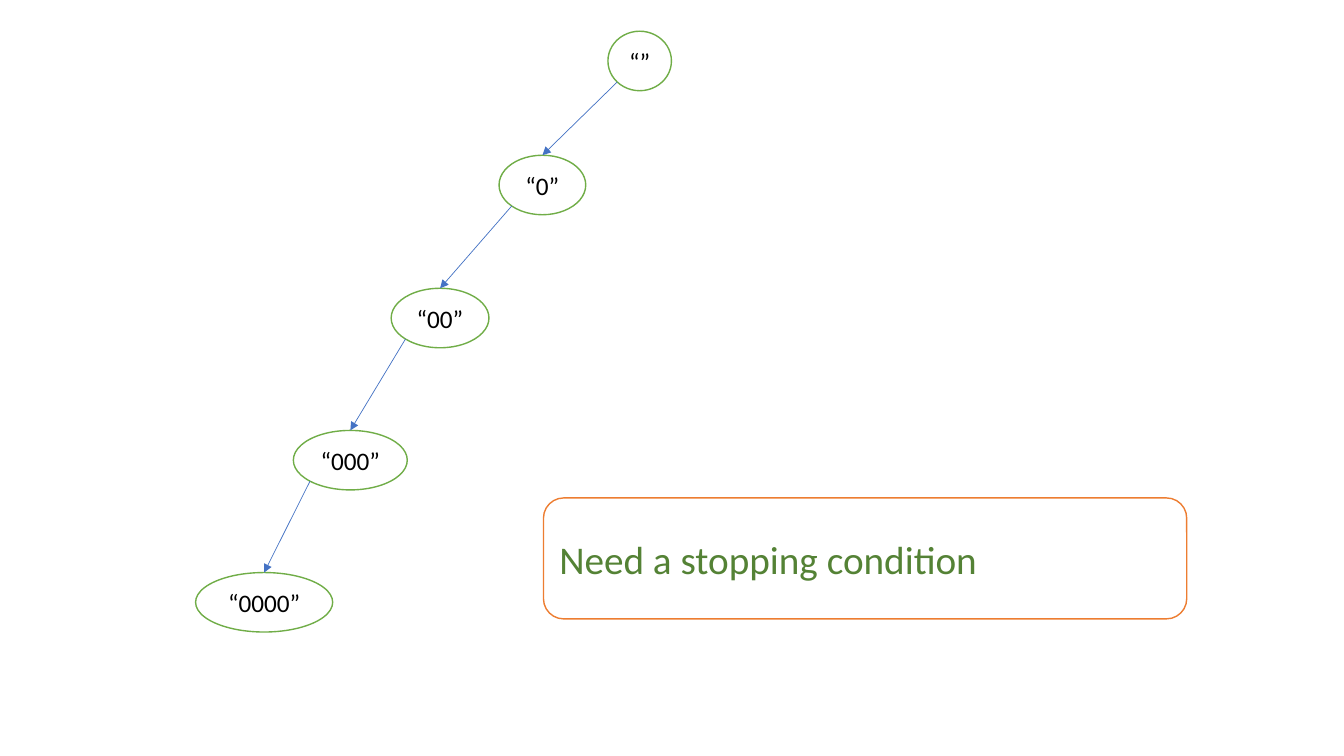
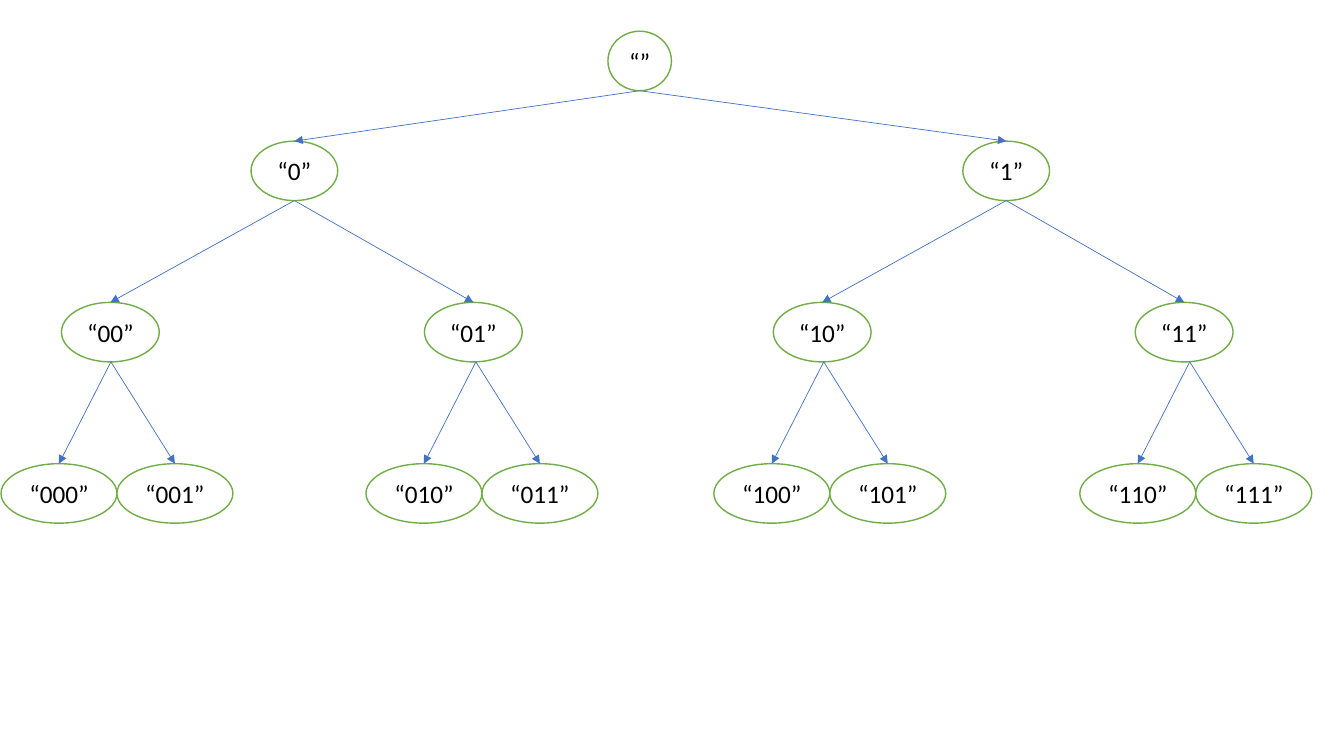
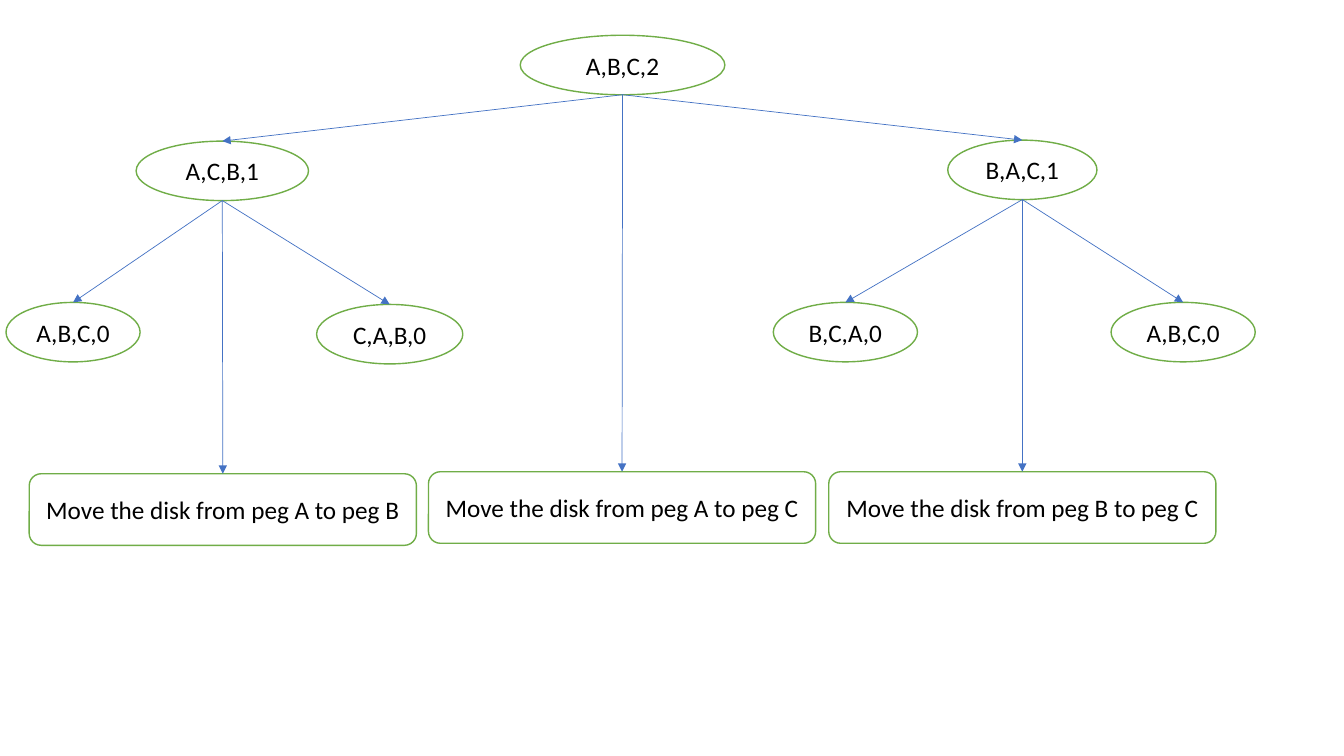
"""Build three slides of recursion trees: binary strings and disk moves."""
import pptx
import pptx.dml.color
import pptx.enum.shapes
import pptx.enum.text
import pptx.oxml
import pptx.oxml.ns
import pptx.util

Inches = pptx.util.Inches
SHAPES = pptx.enum.shapes.MSO_SHAPE
ALIGN = pptx.enum.text.PP_ALIGN

FONT = "Calibri"
WHITE, BLACK = "FFFFFF", "000000"
GREEN, DARK_GREEN, ORANGE, BLUE = "70AD47", "548235", "ED7D31", "4472C4"
NODE_HEIGHT = 0.59
MOVE_WIDTH, MOVE_HEIGHT = 3.84, 0.71
STRING_WIDTHS = [0.63, 0.86, 0.97, 1.15]
DIAGONAL_INSET = 0.146


def color(value):
    """Return a colour from a hex string."""
    return pptx.dml.color.RGBColor.from_string(value)


def add_outlined(slide, kind, box, text, line=GREEN, size=18, ink=BLACK,
                 align=ALIGN.CENTER, margin=0):
    """Add a white outlined shape with one line of text."""
    shape = slide.shapes.add_shape(kind, *map(Inches, box))
    shape.shadow.inherit = False
    shape.fill.solid()
    shape.fill.fore_color.rgb = color(WHITE)
    shape.line.color.rgb = color(line)
    shape.line.width = pptx.util.Pt(1)
    frame = shape.text_frame
    frame.word_wrap = True
    frame.vertical_anchor = pptx.enum.text.MSO_ANCHOR.MIDDLE
    frame.margin_left = frame.margin_right = Inches(margin)
    frame.margin_top = frame.margin_bottom = 0
    frame.text = text
    paragraph = frame.paragraphs[0]
    paragraph.alignment = align
    font = paragraph.runs[0].font
    font.name = FONT
    font.size = pptx.util.Pt(size)
    font.color.rgb = color(ink)
    return shape


def add_node(slide, text, left, top, width):
    """Add an elliptical tree node."""
    return add_outlined(slide, SHAPES.OVAL, (left, top, width, NODE_HEIGHT), text)


def add_move(slide, text, left, top):
    """Add a rounded box that states a disk move."""
    box = (left, top, MOVE_WIDTH, MOVE_HEIGHT)
    return add_outlined(slide, SHAPES.ROUNDED_RECTANGLE, box, text)


def top_point(shape):
    """Return the middle of the upper edge."""
    return shape.left + shape.width // 2, shape.top


def bottom_point(shape):
    """Return the middle of the lower edge."""
    return shape.left + shape.width // 2, shape.top + shape.height


def lower_left_point(shape):
    """Return the lower left diagonal point of an ellipse."""
    return (shape.left + int(shape.width * DIAGONAL_INSET),
            shape.top + int(shape.height * (1 - DIAGONAL_INSET)))


def add_arrow(slide, start, end):
    """Add a thin straight arrow between two points."""
    connector = slide.shapes.add_connector(
        pptx.enum.shapes.MSO_CONNECTOR.STRAIGHT, *start, *end)
    connector.line.color.rgb = color(BLUE)
    connector.line.width = pptx.util.Pt(0.5)
    properties = connector.element.spPr
    head = pptx.oxml.parse_xml(
        f'<a:tailEnd {pptx.oxml.ns.nsdecls("a")} type="triangle"/>')
    properties.find(pptx.oxml.ns.qn("a:ln")).append(head)
    properties.append(pptx.oxml.parse_xml(
        f'<a:effectLst {pptx.oxml.ns.nsdecls("a")}/>'))


def add_fork(slide, start, children):
    """Add an arrow from one point to the top of each child."""
    for child in children:
        add_arrow(slide, start, top_point(child))


def build_endless_chain(slide):
    """Draw the chain of calls that never stops."""
    chain = [("“”", 6.03, 0.31, 0.63), ("“0”", 4.95, 1.54, 0.86),
             ("“00”", 3.88, 2.86, 0.97), ("“000”", 2.91, 4.27, 1.13),
             ("“0000”", 1.94, 5.68, 1.36)]
    nodes = [add_node(slide, *item) for item in chain]
    for parent, child in zip(nodes, nodes[1:]):
        add_arrow(slide, lower_left_point(parent), top_point(child))
    add_outlined(slide, SHAPES.ROUNDED_RECTANGLE, (5.39, 4.94, 6.38, 1.2),
                 "Need a stopping condition", ORANGE, 28, DARK_GREEN,
                 ALIGN.LEFT, 0.1)


def build_binary_tree(slide):
    """Draw the complete tree of binary strings up to length three."""
    pair_lefts = [0.01, 3.63, 7.08, 10.71]
    leaf_width = STRING_WIDTHS[3]
    leaf_lefts = [left + side * leaf_width
                  for left in pair_lefts for side in (0, 1)]
    level_lefts = [[6.03], [2.49, 9.55], [0.61, 4.21, 7.67, 11.26], leaf_lefts]
    tops = [0.31, 1.4, 3, 4.6]
    levels = []
    for depth, (lefts, top) in enumerate(zip(level_lefts, tops)):
        labels = [f"{index:0{depth}b}" if depth else ""
                  for index in range(len(lefts))]
        levels.append([add_node(slide, f"“{label}”", left, top,
                                STRING_WIDTHS[depth])
                       for label, left in zip(labels, lefts)])
    for parents, children in zip(levels[:2], levels[1:]):
        for index, parent in enumerate(parents):
            add_fork(slide, bottom_point(parent),
                     children[2 * index:2 * index + 2])
    for index, left in enumerate(pair_lefts):
        start = Inches(left + 1.09), Inches(tops[2] + NODE_HEIGHT)
        add_fork(slide, start, levels[3][2 * index:2 * index + 2])


def build_disk_moves(slide):
    """Draw the calls and moves for two disks on three pegs."""
    root = add_node(slide, "A,B,C,2", 5.16, 0.35, 2.03)
    first = add_node(slide, "A,C,B,1", 1.35, 1.4, 1.71)
    second = add_node(slide, "B,A,C,1", 9.4, 1.39, 1.48)
    first_calls = [add_node(slide, "A,B,C,0", 0.06, 3, 1.33),
                   add_node(slide, "C,A,B,0", 3.14, 3.02, 1.45)]
    second_calls = [add_node(slide, "B,C,A,0", 7.67, 3, 1.43),
                    add_node(slide, "A,B,C,0", 11.02, 3, 1.43)]
    moves = [add_move(slide, f"Move the disk from peg {pegs[0]} to peg {pegs[1]}",
                      left, top)
             for pegs, left, top in [("AB", 0.29, 4.7), ("AC", 4.25, 4.68),
                                     ("BC", 8.22, 4.68)]]
    add_fork(slide, bottom_point(root), [first, moves[1], second])
    add_fork(slide, bottom_point(first), [*first_calls, moves[0]])
    add_fork(slide, bottom_point(second), [*second_calls, moves[2]])


def main():
    """Build and save the presentation."""
    presentation = pptx.Presentation()
    presentation.slide_width = Inches(13.33)
    presentation.slide_height = Inches(7.5)
    for build in (build_endless_chain, build_binary_tree, build_disk_moves):
        build(presentation.slides.add_slide(presentation.slide_layouts[6]))
    presentation.save("out.pptx")


if __name__ == "__main__":
    main()
